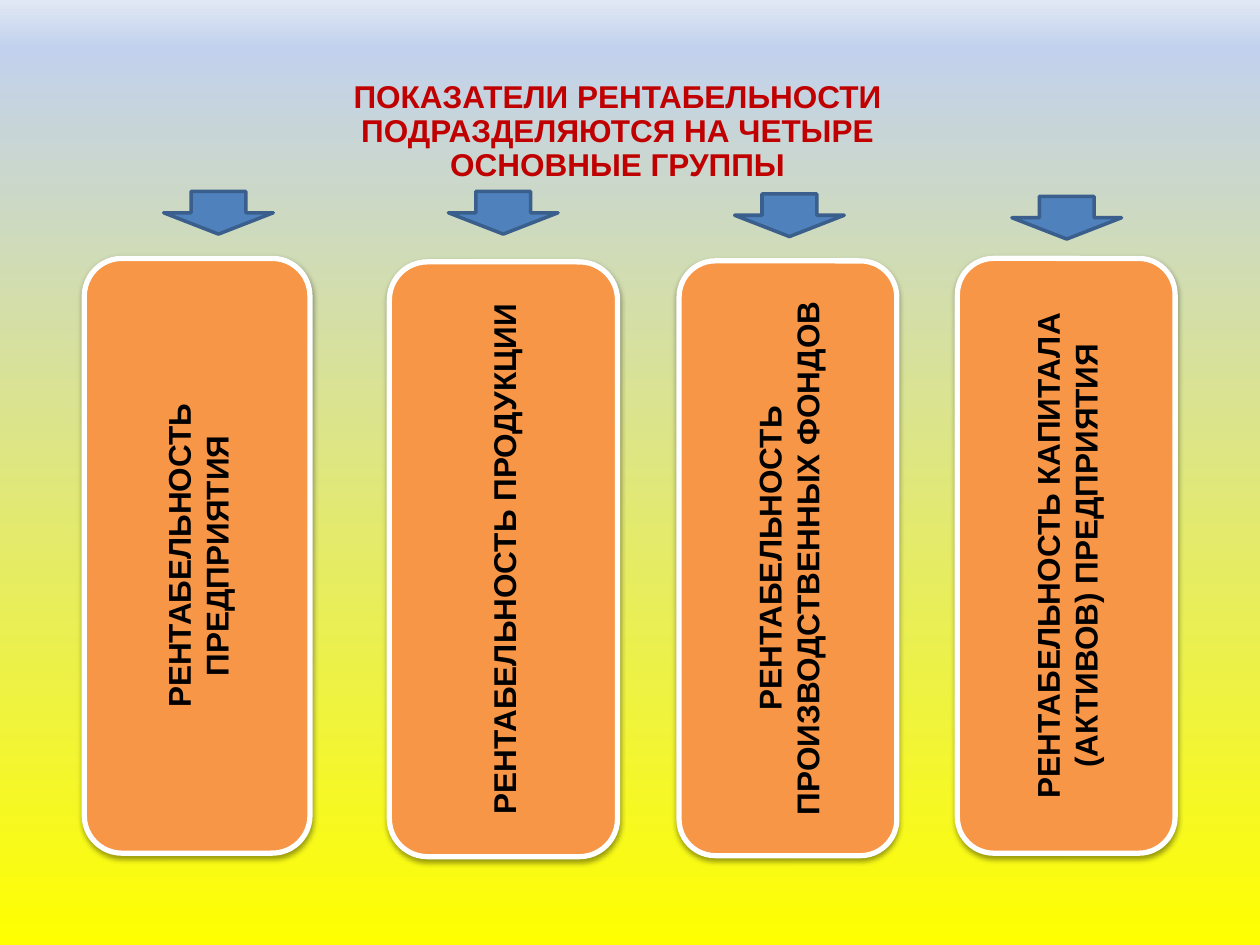
from copy import deepcopy

from lxml.etree import SubElement
from pptx import Presentation
from pptx.dml.color import RGBColor
from pptx.enum.shapes import MSO_SHAPE
from pptx.enum.text import MSO_ANCHOR, MSO_AUTO_SIZE, PP_ALIGN
from pptx.oxml.ns import qn
from pptx.util import Cm, Pt

YELLOW = RGBColor(0xFF, 0xFF, 0x00)
SKY = RGBColor(0xC2, 0xD1, 0xED)
PALE_SKY = RGBColor(0xE1, 0xE8, 0xF5)
RED = RGBColor(0xC0, 0x00, 0x00)
ORANGE = RGBColor(0xF7, 0x96, 0x46)
BLUE = RGBColor(0x4F, 0x81, 0xBD)
DARK_BLUE = RGBColor(0x3A, 0x5F, 0x8C)
WHITE = RGBColor(0xFF, 0xFF, 0xFF)
BLACK = RGBColor(0x00, 0x00, 0x00)

TITLE = "ПОКАЗАТЕЛИ РЕНТАБЕЛЬНОСТИ ПОДРАЗДЕЛЯЮТСЯ НА ЧЕТЫРЕ ОСНОВНЫЕ ГРУППЫ"
BOX_HEIGHT = 11.99
# left, top, width, text
GROUPS = [
    (1.7, 5.21, 4.55, "РЕНТАБЕЛЬНОСТЬ ПРЕДПРИЯТИЯ"),
    (7.85, 5.28, 4.6, "РЕНТАБЕЛЬНОСТЬ ПРОДУКЦИИ"),
    (13.69, 5.26, 4.39, "РЕНТАБЕЛЬНОСТЬ ПРОИЗВОДСТВЕННЫХ ФОНДОВ"),
    (19.3, 5.21, 4.39, "РЕНТАБЕЛЬНОСТЬ КАПИТАЛА (АКТИВОВ) ПРЕДПРИЯТИЯ"),
]
ARROWS = [(3.3, 3.86), (9.04, 3.86), (14.81, 3.91), (20.4, 3.96)]


class SlideBuilder:
    font = "Arial"
    size = Pt(18)

    def __init__(self, slide):
        self.slide = slide

    def background(self, stops):
        """Fill upwards with (position, colour) stops."""
        fill = self.slide.background.fill
        fill.gradient()
        fill.gradient_angle = 90
        gs_list = self.slide.element.find(".//" + qn("a:gsLst"))
        while len(gs_list) < len(stops):
            gs_list.append(deepcopy(gs_list[0]))
        for stop, (position, color) in zip(fill.gradient_stops, stops):
            stop.position = position
            stop.color.rgb = color

    def add_text(self, tf, text, color):
        tf.word_wrap = True
        p = tf.paragraphs[0]
        p.alignment = PP_ALIGN.CENTER
        r = p.add_run()
        r.text = text
        r.font.name = self.font
        r.font.size = self.size
        r.font.bold = True
        r.font.color.rgb = color
        return p

    def title(self, left, top, width, height, text):
        sp = self.slide.shapes.add_textbox(Cm(left), Cm(top), Cm(width), Cm(height))
        p = self.add_text(sp.text_frame, text, RED)
        p.line_spacing = 0.9
        sp.text_frame.auto_size = MSO_AUTO_SIZE.SHAPE_TO_FIT_TEXT

    def shape(self, kind, left, top, width, height, fill, line, weight):
        sp = self.slide.shapes.add_shape(
            kind, Cm(left), Cm(top), Cm(width), Cm(height))
        sp.shadow.inherit = False
        sp.fill.solid()
        sp.fill.fore_color.rgb = fill
        sp.line.color.rgb = line
        sp.line.width = Pt(weight)
        return sp

    def shadow(self, sp):
        effects = sp.element.spPr.find(qn("a:effectLst"))
        outer = SubElement(effects, qn("a:outerShdw"), blurRad="40000",
                           dist="20000", dir="5400000", rotWithShape="0")
        color = SubElement(outer, qn("a:srgbClr"), val=str(BLACK))
        SubElement(color, qn("a:alpha"), val="38000")

    def group_box(self, left, top, width, text):
        sp = self.shape(MSO_SHAPE.ROUNDED_RECTANGLE, left, top, width,
                        BOX_HEIGHT, ORANGE, WHITE, 3)
        self.shadow(sp)
        tf = sp.text_frame
        tf.vertical_anchor = MSO_ANCHOR.MIDDLE
        self.add_text(tf, text, BLACK)
        sp.element.txBody.find(qn("a:bodyPr")).set("vert", "vert270")

    def arrow(self, left, top):
        self.shape(MSO_SHAPE.DOWN_ARROW, left, top, 2.21, 0.86, BLUE, DARK_BLUE, 2)


def main():
    prs = Presentation()
    prs.slide_width, prs.slide_height = Cm(25.4), Cm(19.05)
    s = SlideBuilder(prs.slides.add_slide(prs.slide_layouts[6]))
    s.background([(0, YELLOW), (0.95, SKY), (1, PALE_SKY)])
    s.title(6.1, 1.52, 12.7, 2.34, TITLE)
    for group in GROUPS:
        s.group_box(*group)
    for left, top in ARROWS:
        s.arrow(left, top)
    prs.save("out.pptx")


if __name__ == "__main__":
    main()
